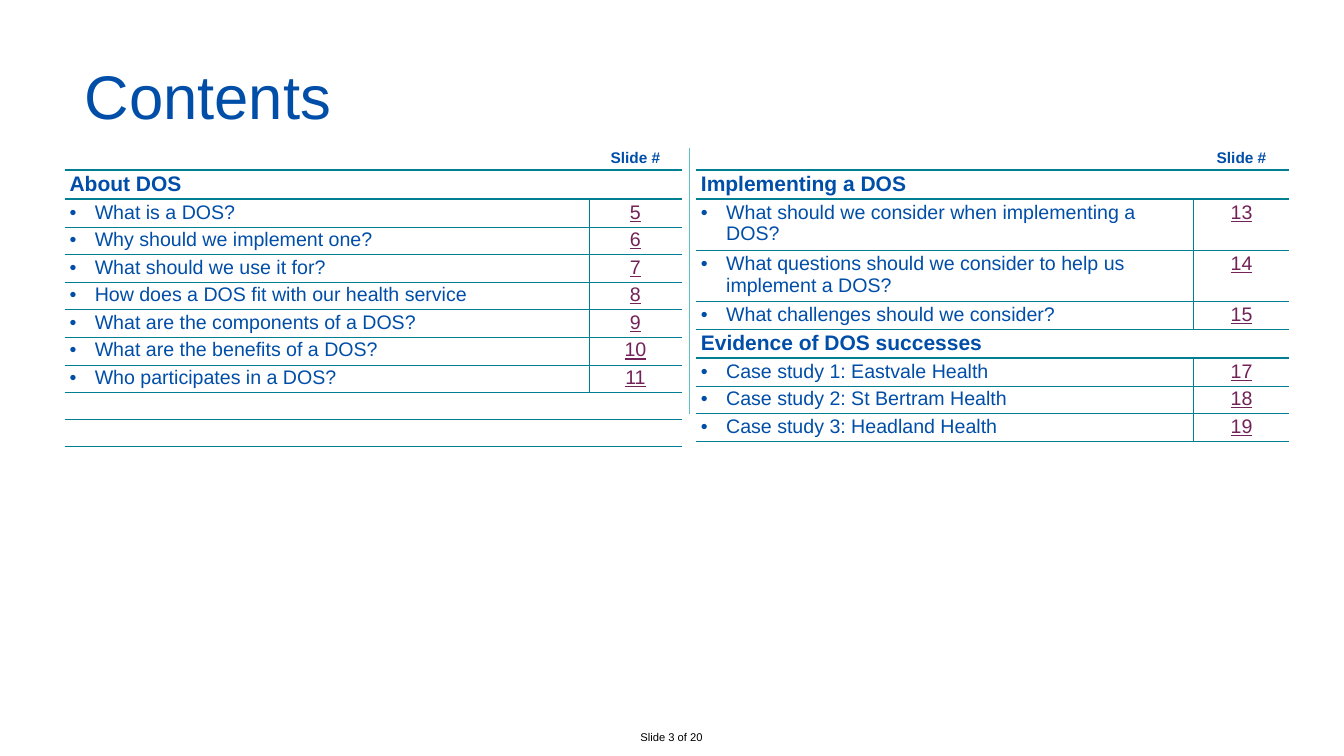
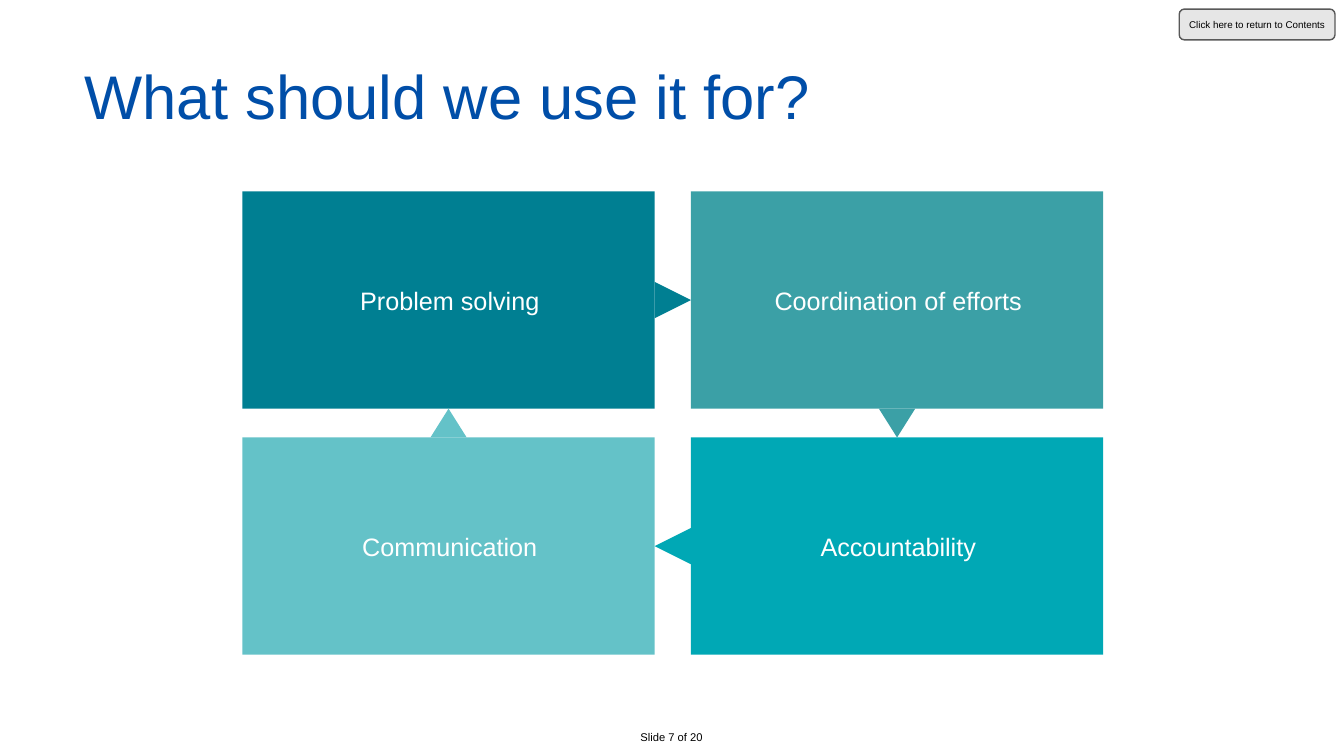
"""Build the contents slide and the four-step usage slide of the DOS deck."""
from lxml.etree import SubElement
from pptx import Presentation
from pptx.dml.color import RGBColor as Rgb
from pptx.enum.shapes import MSO_CONNECTOR as Connector, MSO_SHAPE as Shape
from pptx.enum.text import MSO_ANCHOR as Anchor, PP_ALIGN as Align
from pptx.oxml.ns import qn
from pptx.util import Emu, Inches, Pt

COLOURS = {
    "title": "004EA8", "rule": "007F92", "link": "722257", "divider": "5FC0C6",
    "solving": "007F92", "efforts": "3BA0A6", "account": "00A8B5", "communicate": "64C2C8",
    "button": "E6E6E6", "button_line": "595959", "black": "000000", "white": "FFFFFF",
}
NO_STYLE = "{2D5ABB26-0587-4C30-8999-92F81FD0307C}"

presentation = Presentation()
presentation.slide_width = Inches(26.67)
presentation.slide_height = Inches(15)
COLUMN = presentation.slide_width / 100
ROW = presentation.slide_height / 100


def place(left, top, width, height):
    """Turn shares of the slide, in percent, into lengths."""
    return [Emu(int(n * unit)) for n, unit in zip((left, top, width, height), (COLUMN, ROW) * 2)]


def write(frame, text, size, colour, align=Align.CENTER, bold=False, underline=False):
    """Put one run of text into a frame and return its paragraph."""
    frame.word_wrap = True
    paragraph = frame.paragraphs[0]
    paragraph.alignment = align
    run = paragraph.add_run()
    run.text = text
    run.font.name = "Arial"
    run.font.size = Pt(size)
    run.font.bold = bold
    run.font.underline = underline
    run.font.color.rgb = Rgb.from_string(COLOURS[colour])
    return paragraph


slides = []
for title, number, title_width in [("Contents", 3, 86.8), ("What should we use it for?", 7, 90.96)]:
    slide = presentation.slides.add_slide(presentation.slide_layouts[6])
    footer = slide.shapes.add_textbox(*place(43.61, 96.33, 12.71, 2.47))
    write(footer.text_frame, f"Slide {number} of 20", 16, "black")
    heading = slide.shapes.add_textbox(*place(6.3, 8.2, title_width, 8.47))
    frame = heading.text_frame
    frame.margin_left = frame.margin_right = frame.margin_top = frame.margin_bottom = 0
    frame.vertical_anchor = Anchor.MIDDLE
    write(frame, title, 88, "title", Align.LEFT).line_spacing = Pt(108)
    slides.append(slide)
contents_slide, usage_slide = slides

ROW_HEIGHTS = {"header": 2.93, "heading": 3.8, "item": 3.55, "long item": 6.47,
               "closing": 3.55, "empty": 3.55}
RULE_BELOW = {"header": 3, "heading": 3, "item": 0.5, "long item": 0.5, "closing": 0.5, "empty": 0}
TABLE_TOP = 19.53

about_rows = [
    ("header", "", "Slide #"),
    ("heading", "About DOS", ""),
    ("item", "What is a DOS?", "5"),
    ("item", "Why should we implement one?", "6"),
    ("item", "What should we use it for?", "7"),
    ("item", "How does a DOS fit with our health service", "8"),
    ("item", "What are the components of a DOS?", "9"),
    ("item", "What are the benefits of a DOS?", "10"),
    ("item", "Who participates in a DOS?", "11"),
    ("closing", "", ""),
] + [("empty", "", "")] * 3
implementing_rows = [
    ("header", "", "Slide #"),
    ("heading", "Implementing a DOS", ""),
    ("long item", "What should we consider when implementing a DOS?", "13"),
    ("long item", "What questions should we consider to help us implement a DOS?", "14"),
    ("item", "What challenges should we consider?", "15"),
    ("heading", "Evidence of DOS successes", ""),
    ("item", "Case study 1: Eastvale Health", "17"),
    ("item", "Case study 2: St Bertram Health", "18"),
    ("item", "Case study 3: Headland Health", "19"),
]

for left, widths, upright, rows in [
    (4.8, (39.03, 6.9), 0.5, about_rows),
    (51.78, (37.05, 7.09), 1.5, implementing_rows),
]:
    height = sum(ROW_HEIGHTS[kind] for kind, topic, page in rows)
    graphic = contents_slide.shapes.add_table(
        len(rows), 2, *place(left, TABLE_TOP, sum(widths), height))
    table = graphic.table
    table.first_row = table.horz_banding = False
    graphic._element.find(".//" + qn("a:tableStyleId")).text = NO_STYLE
    for column, width in zip(table.columns, widths):
        column.width = Emu(int(width * COLUMN))
    rule_above = 0
    for index, (kind, topic, page) in enumerate(rows):
        table.rows[index].height = Emu(int(ROW_HEIGHTS[kind] * ROW))
        is_item = kind.endswith("item")
        inner = upright if is_item else 0
        for position, text in enumerate((topic, page)):
            cell = table.cell(index, position)
            cell.margin_top = cell.margin_bottom = Inches(0.04)
            borders = {"a:lnL": inner * position, "a:lnR": inner * (1 - position),
                       "a:lnT": rule_above, "a:lnB": RULE_BELOW[kind]}
            for side, weight in borders.items():
                if weight:
                    line = SubElement(cell._tc.get_or_add_tcPr(), qn(side), w=str(Pt(weight)))
                    fill = SubElement(line, qn("a:solidFill"))
                    SubElement(fill, qn("a:srgbClr"), val=COLOURS["rule"])
            cell.fill.background()
            if not text:
                continue
            if kind == "header":
                write(cell.text_frame, text, 22, "title", bold=True)
            elif kind == "heading":
                write(cell.text_frame, text, 30, "title", Align.LEFT, bold=True)
            elif position == 1:
                write(cell.text_frame, text, 28, "link", underline=True)
            else:
                paragraph = write(cell.text_frame, text, 28, "title", Align.LEFT)
                properties = paragraph._p.get_or_add_pPr()
                properties.set("marL", str(Inches(0.5)))
                properties.set("indent", str(-Inches(0.5)))
                SubElement(properties, qn("a:buFont"), typeface="Arial")
                SubElement(properties, qn("a:buChar"), char="•")
        if kind == "heading":
            table.cell(index, 0).merge(table.cell(index, 1))
        rule_above = RULE_BELOW[kind]

x, top, x_end, bottom = place(51.26, TABLE_TOP, 51.26, 54.73)
divider = contents_slide.shapes.add_connector(Connector.STRAIGHT, x, top, x_end, bottom)
divider.line.color.rgb = Rgb.from_string(COLOURS["divider"])
divider.line.width = Pt(0.75)
SubElement(divider._element.spPr, qn("a:effectLst"))

CARD_LEFT, CARD_TOP, CARD_WIDTH, CARD_HEIGHT = 18.04, 25.33, 30.67, 28.73
GAP_X, GAP_Y = 2.7, 3.81
SQUARE_HEIGHT = 4.8

for text, colour, column, row, step_x, step_y, rotation in [
    ("Problem solving", "solving", 0, 0, 1, 0, 90),
    ("Coordination of efforts", "efforts", 1, 0, 0, 1, 180),
    ("Accountability", "account", 1, 1, -1, 0, 270),
    ("Communication", "communicate", 0, 1, 0, -1, 0),
]:
    left = CARD_LEFT + column * (CARD_WIDTH + GAP_X)
    top = CARD_TOP + row * (CARD_HEIGHT + GAP_Y)
    card = usage_slide.shapes.add_shape(
        Shape.RECTANGLE, *place(left, top, CARD_WIDTH, CARD_HEIGHT))
    pointer_height = SQUARE_HEIGHT if step_x else GAP_Y
    center_x = left + CARD_WIDTH / 2 + step_x * (CARD_WIDTH + GAP_X) / 2
    center_y = top + CARD_HEIGHT / 2 + step_y * (CARD_HEIGHT + GAP_Y) / 2
    pointer = usage_slide.shapes.add_shape(Shape.ISOSCELES_TRIANGLE, *place(
        center_x - GAP_X / 2, center_y - pointer_height / 2, GAP_X, pointer_height))
    pointer.rotation = rotation
    for shape in (card, pointer):
        shape.shadow.inherit = False
        shape.fill.solid()
        shape.fill.fore_color.rgb = Rgb.from_string(COLOURS[colour])
        shape.line.fill.background()
    frame = card.text_frame
    frame.margin_left = Inches(0.1)
    frame.margin_right = frame.margin_top = frame.margin_bottom = Inches(0.05)
    frame.vertical_anchor = Anchor.MIDDLE
    write(frame, text, 36, "white")

button = usage_slide.shapes.add_shape(Shape.ROUNDED_RECTANGLE, *place(87.74, 1.2, 11.59, 4.07))
button.shadow.inherit = False
button.fill.solid()
button.fill.fore_color.rgb = Rgb.from_string(COLOURS["button"])
button.line.color.rgb = Rgb.from_string(COLOURS["button_line"])
button.line.width = Pt(2)
frame = button.text_frame
frame.margin_left = frame.margin_right = frame.margin_top = frame.margin_bottom = 0
frame.vertical_anchor = Anchor.MIDDLE
write(frame, "Click here to return to Contents", 14, "black")

presentation.save("out.pptx")
